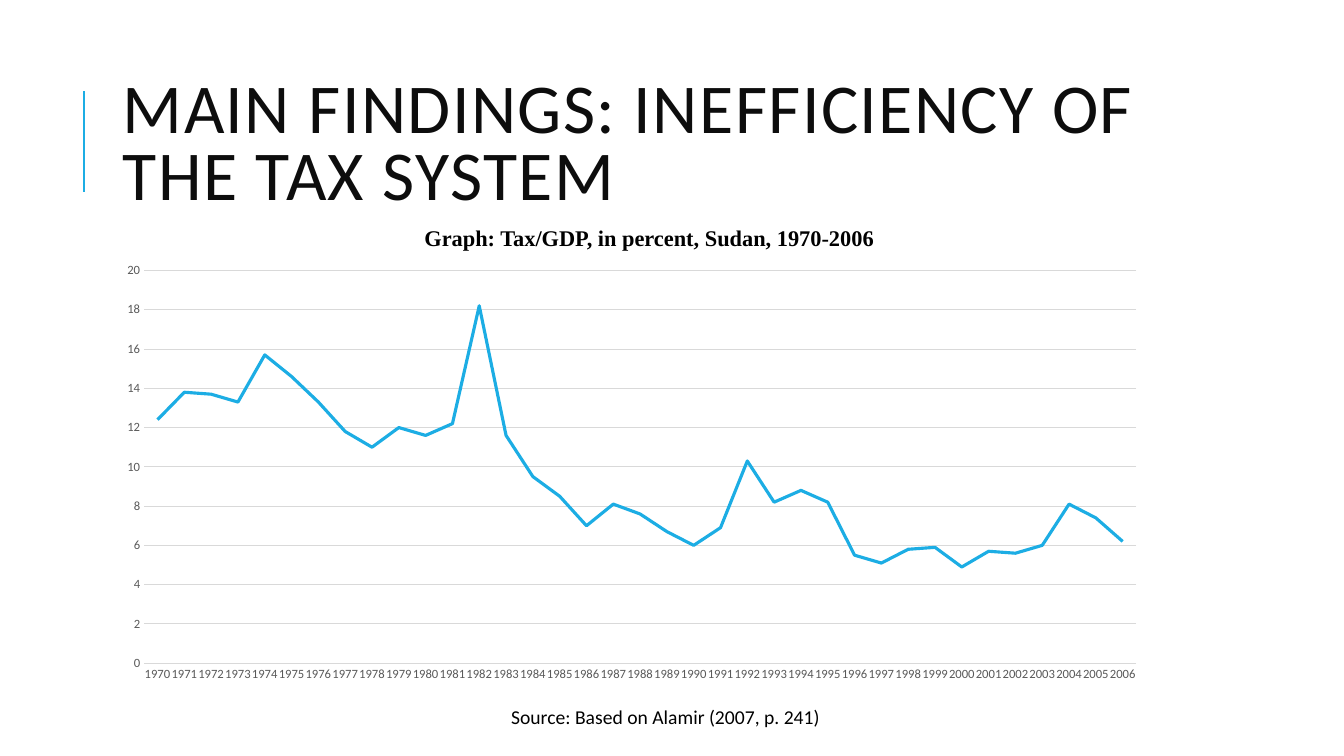
import pptx
import pptx.chart.data
import pptx.dml.color
import pptx.enum.chart
import pptx.enum.shapes
import pptx.enum.text
import pptx.oxml.ns
import pptx.oxml.xmlchemy
import pptx.util

Pt = pptx.util.Pt
RGB = pptx.dml.color.RGBColor
qn = pptx.oxml.ns.qn
make = pptx.oxml.xmlchemy.OxmlElement
ALIGN = pptx.enum.text.PP_ALIGN
ANCHOR = pptx.enum.text.MSO_ANCHOR
FIT = pptx.enum.text.MSO_AUTO_SIZE

# Content
TITLE = "MAIN FINDINGS: INEFFICIENCY OF THE TAX SYSTEM"
HEADING = "Graph: Tax/GDP, in percent, Sudan, 1970-2006"
SOURCE = "Source: Based on Alamir (2007, p. 241)"
START = 1970
RATES = [
    12.4, 13.8, 13.7, 13.3, 15.7, 14.6, 13.3, 11.8, 11, 12,
    11.6, 12.2, 18.2, 11.6, 9.5, 8.5, 7, 8.1, 7.6, 6.7,
    6, 6.9, 10.3, 8.2, 8.8, 8.2, 5.5, 5.1, 5.8, 5.9,
    4.9, 5.7, 5.6, 6, 8.1, 7.4, 6.2,
]
PLOT = {"x": 0.03, "y": 0.02, "w": 0.95, "h": 0.93}

# Colours
BLUE = RGB(0x1C, 0xAD, 0xE4)
INK = RGB(0x0D, 0x0D, 0x0D)
BLACK = RGB(0, 0, 0)
GREY = RGB(0x59, 0x59, 0x59)
PALE = RGB(0xD9, 0xD9, 0xD9)

# Places in points: left, top, width, height
TITLE_BOX = (80.6, 46.1, 765.4, 118.1)
CHART_BOX = (80.6, 187.2, 745.9, 301.7)
HEAD_BOX = (293.8, 146.9, 339.8, 36)
SOURCE_BOX = (163.4, 499.7, 624.2, 24.5)
BAR = (60, 136.8, 60, 64.8)


def style(font, size, color, name="Calibri", bold=False):
    font.size, font.name, font.bold = Pt(size), name, bold
    font.color.rgb = color


def write(shape, text, size, color, name="Calibri", bold=False, align=ALIGN.LEFT,
          anchor=ANCHOR.TOP, wrap=True, fit=FIT.SHAPE_TO_FIT_TEXT,
          lines=1.0, gap=0, track=0):
    frame = shape.text_frame
    frame.word_wrap, frame.auto_size, frame.vertical_anchor = wrap, fit, anchor
    para = frame.paragraphs[0]
    para.alignment, para.line_spacing = align, lines
    para.space_before = para.space_after = Pt(gap)
    run = para.add_run()
    run.text = text
    style(run.font, size, color, name, bold)
    if track:
        run.font._element.set("spc", str(track * 100))


deck = pptx.Presentation()
deck.slide_width, deck.slide_height = Pt(960), Pt(540)
slide = deck.slides.add_slide(deck.slide_layouts[5])
shapes = slide.shapes

# Accent bar
bar = shapes.add_connector(pptx.enum.shapes.MSO_CONNECTOR.STRAIGHT, *map(Pt, BAR))
bar.line.color.rgb, bar.line.width = BLUE, Pt(1.5)
bar._element.spPr.append(make("a:effectLst"))

# Title
title = shapes.title
title.left, title.top, title.width, title.height = map(Pt, TITLE_BOX)
write(title, TITLE, 50, INK, anchor=ANCHOR.MIDDLE, fit=FIT.NONE, lines=0.8, track=1)

# Line chart
data = pptx.chart.data.CategoryChartData()
data.categories = [str(START + i) for i in range(len(RATES))]
data.add_series("Series 1", RATES)
chart = shapes.add_chart(pptx.enum.chart.XL_CHART_TYPE.LINE,
                         *map(Pt, CHART_BOX), data).chart
chart.has_legend = chart.has_title = False
style(chart.font, 10, BLACK)
chart.plots[0].vary_by_categories = False
line = chart.plots[0].series[0]
line.smooth = False
line.format.line.color.rgb, line.format.line.width = BLUE, Pt(2.25)

# Axes
years, rates = chart.category_axis, chart.value_axis
for axis in (years, rates):
    axis.major_tick_mark = axis.minor_tick_mark = pptx.enum.chart.XL_TICK_MARK.NONE
    style(axis.tick_labels.font, 9, GREY)
    body = axis._element.find(qn("c:txPr")).find(qn("a:bodyPr"))
    body.set("rot", "-60000000")
    body.set("vert", "horz")
years.has_major_gridlines = False
rates.has_major_gridlines = True
rates.minimum_scale, rates.maximum_scale, rates.major_unit = 0, 20, 2
rates.format.line.fill.background()
for rule in (years.format.line, rates.major_gridlines.format.line):
    rule.color.rgb, rule.width = PALE, Pt(0.75)

# Plot area inside the chart
area = chart._chartSpace.find(qn("c:chart")).find(qn("c:plotArea"))
place = area.find(qn("c:layout"))
if place is None:
    place = make("c:layout")
    area.insert(0, place)
manual = make("c:manualLayout")
place.append(manual)
parts = [("layoutTarget", "inner"), ("xMode", "edge"), ("yMode", "edge")]
for tag, val in parts + list(PLOT.items()):
    node = make("c:" + tag)
    node.set("val", str(val))
    manual.append(node)

# Heading and source
write(shapes.add_textbox(*map(Pt, HEAD_BOX)), HEADING, 16, BLACK,
      name="Times New Roman", bold=True, align=ALIGN.CENTER, wrap=False,
      lines=1.5, gap=6)
write(shapes.add_textbox(*map(Pt, SOURCE_BOX)), SOURCE, 14, BLACK, align=ALIGN.CENTER)

deck.save("out.pptx")
